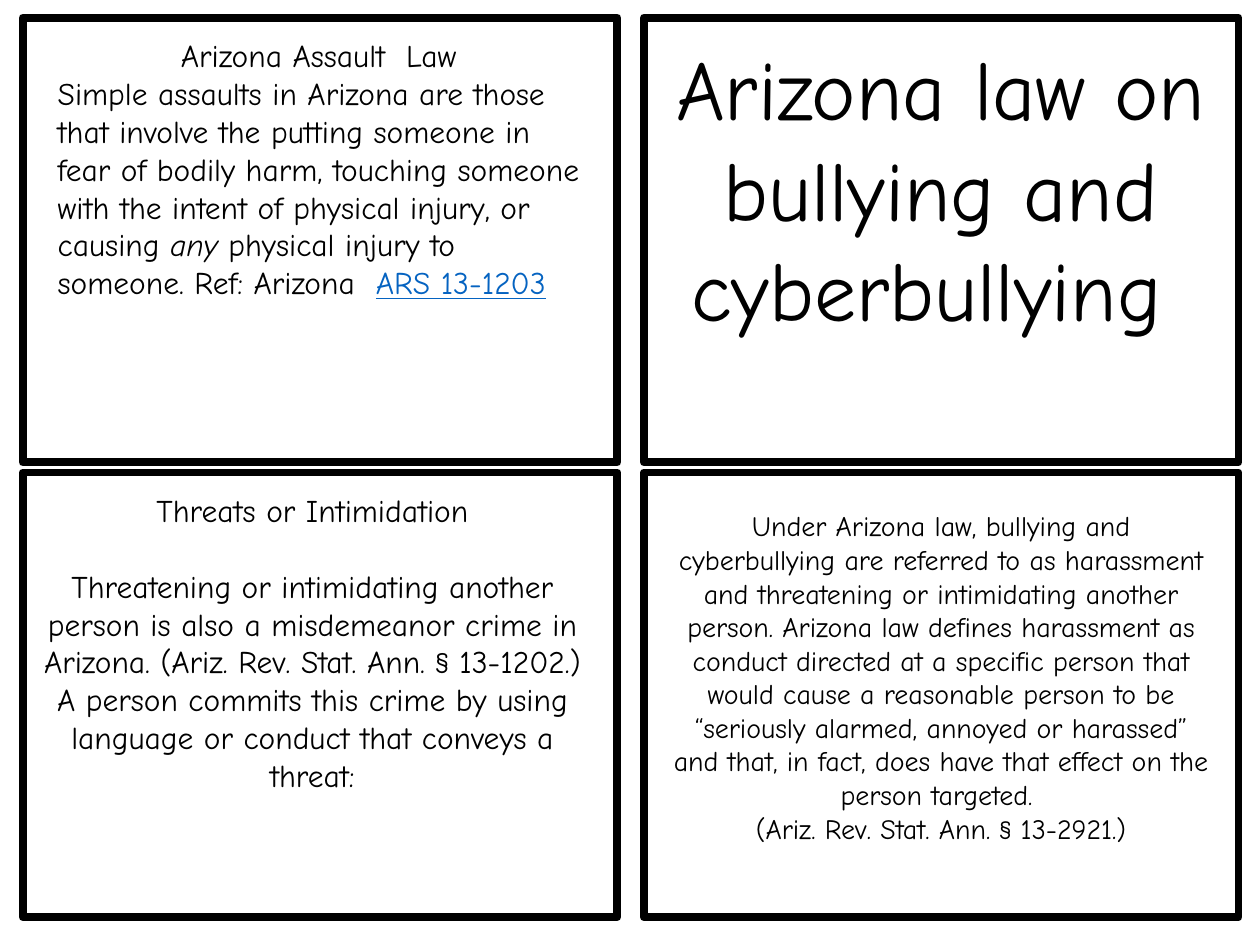
"""Build a slide of four framed cards about Arizona assault and bullying law."""
from pptx import Presentation
from pptx.dml.color import RGBColor
from pptx.enum.shapes import MSO_SHAPE
from pptx.enum.text import MSO_AUTO_SIZE, PP_ALIGN
from pptx.util import Inches, Pt

FONT = "Comic Neue"
BLACK, WHITE, LINK_BLUE = "000000", "FFFFFF", "0563C1"
LEFT, TOP = 0.18, 0.14
CARD_WIDTH, CARD_HEIGHT = 4.72, 3.53
COLUMN_STEP, ROW_STEP = 4.93, 3.61
BLANK_LINE = 21.6


def color(hex_string):
    return RGBColor.from_string(hex_string)


def add_text(slide, box, size, paragraphs):
    textbox = slide.shapes.add_textbox(*map(Inches, box))
    frame = textbox.text_frame
    frame.word_wrap = True
    frame.auto_size = MSO_AUTO_SIZE.SHAPE_TO_FIT_TEXT
    for index, (alignment, space_after, texts) in enumerate(paragraphs):
        paragraph = frame.add_paragraph() if index else frame.paragraphs[0]
        paragraph.alignment = alignment
        paragraph.space_after = Pt(space_after)
        paragraph.font.name = FONT
        paragraph.font.size = Pt(size)
        paragraph.font.color.rgb = color(BLACK)
        for text in texts:
            paragraph.add_run().text = text
    return frame


presentation = Presentation()
presentation.slide_width = Inches(10)
presentation.slide_height = Inches(7.5)
slide = presentation.slides.add_slide(presentation.slide_layouts[6])

for column in range(2):
    for row in range(2):
        card = slide.shapes.add_shape(
            MSO_SHAPE.RECTANGLE,
            Inches(LEFT + column * COLUMN_STEP), Inches(TOP + row * ROW_STEP),
            Inches(CARD_WIDTH), Inches(CARD_HEIGHT))
        card.shadow.inherit = False
        card.fill.solid()
        card.fill.fore_color.rgb = color(WHITE)
        card.line.color.rgb = color(BLACK)
        card.line.width = Pt(4.5)

assault = add_text(slide, (0.36, 0.24, 4.34, 3.94), 18, [
    (PP_ALIGN.CENTER, 0, ["Arizona Assault  Law"]),
    (PP_ALIGN.LEFT, 0, [
        "Simple assaults in Arizona are those that involve the putting someone "
        "in fear of bodily harm, touching someone with the intent of physical "
        "injury, or causing ",
        "any",
        " physical injury to someone. Ref: Arizona  ",
        "ARS 13-1203"])])
emphasis, reference = assault.paragraphs[1].runs[1::2]
emphasis.font.italic = True
reference.font.underline = True
reference.font.color.rgb = color(LINK_BLUE)

add_text(slide, (5.23, 0.24, 4.47, 3.33), 48, [
    (PP_ALIGN.CENTER, 0, ["Arizona law on bullying and cyberbullying "])])

add_text(slide, (5.22, 3.99, 4.5, 3.06), 16, [
    (PP_ALIGN.CENTER, 0, [
        "Under Arizona law, bullying and cyberbullying are referred to as "
        "harassment and threatening or intimidating another person. Arizona law "
        "defines harassment as conduct directed at a specific person that would "
        "cause a reasonable person to be “seriously alarmed, annoyed or "
        "harassed” and that, in fact, does have that effect on the person "
        "targeted. "]),
    (PP_ALIGN.CENTER, 0, ["(Ariz. Rev. Stat. Ann. § 13-2921.)"])])

add_text(slide, (0.18, 3.85, 4.6, 2.83), 18, [
    (PP_ALIGN.CENTER, BLANK_LINE, ["Threats or Intimidation"]),
    (PP_ALIGN.CENTER, 0, [
        "Threatening or intimidating another person is also a misdemeanor crime "
        "in Arizona. (Ariz. Rev. Stat. Ann. § 13-1202.) A person commits this "
        "crime by using language or conduct that conveys a threat:"])])

presentation.save("out.pptx")
